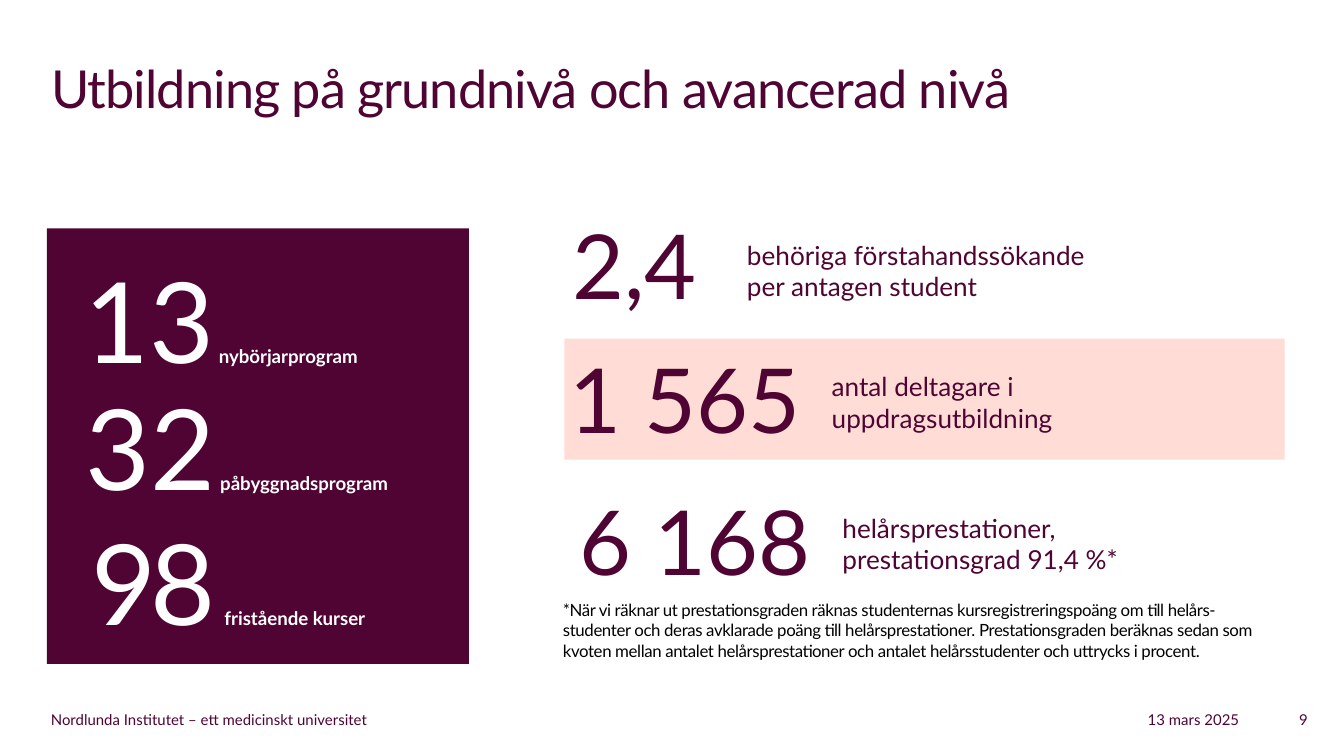
from pptx import Presentation
from pptx.dml.color import RGBColor
from pptx.enum.shapes import MSO_SHAPE as Shape
from pptx.enum.text import MSO_ANCHOR as Anchor, MSO_AUTO_SIZE as AutoSize, PP_ALIGN as Align
from pptx.util import Inches, Pt

PLUM, PINK, WHITE, BLACK = "4F0433", "FFDDD6", "FFFFFF", "000000"

TITLE = "Utbildning på grundnivå och avancerad nivå"
PANELS = [(4.2, 2.52, 5.36, 0.9, PINK), (0.35, 1.7, 3.14, 3.24, PLUM)]
PROGRAMS = [
    ("13", " nybörjarprogram", 0.53, 1.82, 3.77, 0),
    ("32", " påbyggnadsprogram", 0.54, 2.77, 3.99, 0),
    ("98", "  fristående kurser", 0.58, 3.77, 3.41, -3),
]
FIGURES = [
    ("2,4", 3.54, 1.51, "behöriga förstahandssökande\nper antagen student", 5.46, 1.73),
    ("1 565", 3.92, 2.51, "antal deltagare i\nuppdragsutbildning", 6.09, 2.71),
    ("6 168", 3.99, 3.57, "helårsprestationer,\nprestationsgrad 91,4 %*", 6.17, 3.76),
]
FOOTNOTE = (
    "*När vi räknar ut prestationsgraden räknas studenternas kursregistreringspoäng "
    "om till helårs-studenter och deras avklarade poäng till helårsprestationer. "
    "Prestationsgraden beräknas sedan som kvoten mellan antalet helårsprestationer "
    "och antalet helårsstudenter och uttrycks i procent."
)
FOOTERS = [
    ("Nordlunda Institutet – ett medicinskt universitet", 0.28, 3.07, Align.LEFT),
    ("13 mars 2025", 7.24, 2.08, Align.RIGHT),
    ("9", 9.08, 0.75, Align.RIGHT),
]


def color(value):
    return RGBColor.from_string(value)


def add_run(paragraph, text, size, fill=PLUM, bold=False, spacing=0):
    run = paragraph.add_run()
    run.text = text
    font = run.font
    font.name, font.size, font.bold = "Lato", Pt(size), bold
    font.color.rgb = color(fill)
    if spacing:
        font._element.set("spc", str(round(spacing * 100)))


def write(shape, text, size, align=Align.LEFT, line_spacing=None, **run_format):
    frame = shape.text_frame
    frame.word_wrap = True
    frame.auto_size = AutoSize.NONE
    frame.vertical_anchor = Anchor.TOP
    for index, line in enumerate(text.split("\n")):
        paragraph = frame.add_paragraph() if index else frame.paragraphs[0]
        paragraph.alignment = align
        if line_spacing:
            paragraph.line_spacing = Pt(line_spacing)
        add_run(paragraph, line, size, **run_format)
    return frame.paragraphs[0]


def add_text(slide, text, left, top, width, height, size, **text_format):
    box = slide.shapes.add_textbox(*map(Inches, (left, top, width, height)))
    return write(box, text, size, **text_format)


def add_panel(slide, left, top, width, height, fill):
    panel = slide.shapes.add_shape(Shape.RECTANGLE, *map(Inches, (left, top, width, height)))
    panel.shadow.inherit = False
    panel.fill.solid()
    panel.fill.fore_color.rgb = color(fill)
    panel.line.fill.background()


def main():
    presentation = Presentation()
    presentation.slide_width = Inches(10)
    presentation.slide_height = Inches(10 * 9 / 16)
    slide = presentation.slides.add_slide(presentation.slide_layouts[5])

    title = slide.shapes.title
    title.left, title.top, title.width, title.height = map(Inches, (0.28, 0.37, 9.44, 0.94))
    write(title, TITLE, 28, spacing=-0.5)

    for panel in PANELS:
        add_panel(slide, *panel)

    for number, label, left, top, width, spacing in PROGRAMS:
        paragraph = add_text(slide, number, left, top, width, 1.11, 60, fill=WHITE, spacing=spacing)
        add_run(paragraph, label, 10, fill=WHITE, bold=True)

    for number, left, top, label, label_left, label_top in FIGURES:
        add_text(slide, number, left, top, 2.36, 0.91, 48, align=Align.CENTER)
        add_text(slide, label, label_left, label_top, 5, 0.57, 14)

    add_text(slide, FOOTNOTE, 4.09, 4.41, 5.54, 0.6, 9, line_spacing=11, fill=BLACK, spacing=-0.2)

    for text, left, width, align in FOOTERS:
        add_text(slide, text, left, 5.24, width, 0.19, 8, align=align)

    presentation.save("out.pptx")


if __name__ == "__main__":
    main()
